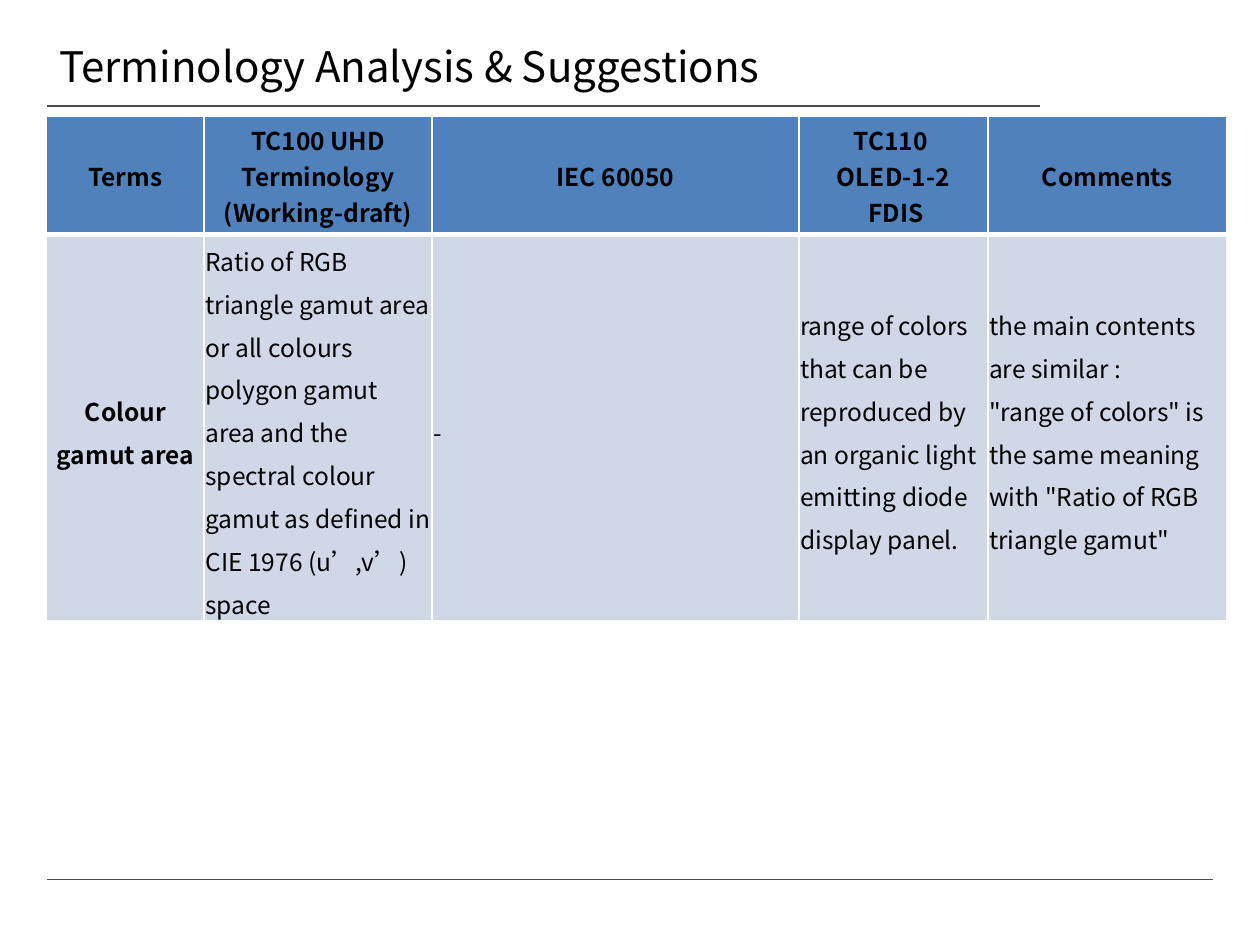
from copy import deepcopy
from dataclasses import dataclass

from lxml import etree
from pptx import Presentation
from pptx import util as u
from pptx.dml.color import RGBColor
from pptx.enum import shapes, text
from pptx.oxml.ns import qn


@dataclass(frozen=True)
class Theme:
    font: str = "Noto Sans CJK SC"
    ink: str = "000000"
    rule: str = "4D4D4F"
    header: str = "4F81BD"
    body: str = "D0D8E8"
    border: str = "FFFFFF"
    title_size: int = 24
    table_size: int = 14
    thin: int = 1
    thick: int = 3


LEFT = 0.37
COLUMNS = [1.25, 1.81, 2.91, 1.5, 1.9]
ROWS = [0.94, 3.07]
HEADERS = [
    ["Terms"],
    ["TC100 UHD Terminology\n(Working-draft)"],
    ["IEC 60050"],
    ["TC110 ", "OLED-1-2", " FDIS"],
    ["Comments"],
]
GAMUT_AREA = [
    ["Colour gamut area"],
    ["Ratio of RGB triangle gamut area or all colours polygon gamut area "
     "and the spectral colour gamut as defined in CIE 1976 (u’,v’) space"],
    ["-"],
    ["range of colors that can be reproduced by an organic light emitting "
     "diode display panel."],
    ['the main contents are similar :\n"range of colors" is the same meaning '
     'with "Ratio of RGB triangle gamut"'],
]


def set_all(target, values):
    for name, value in values.items():
        setattr(target, name, value)


class SlideBuilder:
    def __init__(self, slide, theme):
        self.s = slide
        self.theme = theme

    def rule(self, right, y):
        line = self.s.shapes.add_connector(
            shapes.MSO_CONNECTOR.STRAIGHT,
            u.Inches(LEFT), u.Inches(y), u.Inches(right), u.Inches(y))
        line.line.color.rgb = RGBColor.from_string(self.theme.rule)
        line.line.width = u.Pt(self.theme.thin)
        etree.SubElement(line._element.spPr, qn("a:effectLst"))

    def paragraphs(self, tf, lines, size, bold=False, **layout):
        """Write one paragraph per line; a newline inside it is a line break."""
        for i, line in enumerate(lines):
            p = tf.paragraphs[0] if i == 0 else tf.add_paragraph()
            p.text = line
            set_all(p, layout)
            for r in p.runs:
                set_all(r.font, {"name": self.theme.font, "size": u.Pt(size), "bold": bold})
                r.font.color.rgb = RGBColor.from_string(self.theme.ink)
                rPr = r._r.get_or_add_rPr()
                etree.SubElement(rPr, qn("a:ea"), typeface=self.theme.font)
            for br in p._p.findall(qn("a:br")):
                br.append(deepcopy(rPr))

    def title(self, wording, left, top, width, height):
        sp = self.s.shapes.add_textbox(*map(u.Inches, (left, top, width, height)))
        tf = sp.text_frame
        set_all(tf, {"word_wrap": True, "vertical_anchor": text.MSO_ANCHOR.MIDDLE})
        self.paragraphs(tf, [wording], self.theme.title_size)

    def borders(self, cell, top, bottom):
        thin = self.theme.thin
        tcPr = cell._tc.get_or_add_tcPr()
        sides = {"lnL": thin, "lnR": thin, "lnT": top, "lnB": bottom}
        for i, (side, width) in enumerate(sides.items()):
            ln = etree.Element(qn(f"a:{side}"), w=str(u.Pt(width)))
            fill = etree.SubElement(ln, qn("a:solidFill"))
            etree.SubElement(fill, qn("a:srgbClr"), val=self.theme.border)
            tcPr.insert(i, ln)

    def cell(self, cell, lines, is_header, is_term):
        theme = self.theme
        set_all(cell, {
            "margin_left": u.Inches(0.01), "margin_right": u.Inches(0.01),
            "margin_top": u.Inches(0.01), "margin_bottom": 0,
            "vertical_anchor": text.MSO_ANCHOR.MIDDLE,
        })
        cell.fill.solid()
        cell.fill.fore_color.rgb = RGBColor.from_string(
            theme.header if is_header else theme.body)
        if is_header:
            self.borders(cell, theme.thin, theme.thick)
        else:
            self.borders(cell, theme.thick, theme.thin)
        strong = is_header or is_term
        self.paragraphs(
            cell.text_frame, lines, theme.table_size, bold=strong,
            alignment=text.PP_ALIGN.CENTER if strong else text.PP_ALIGN.LEFT,
            line_spacing=1.0 if is_header else 1.2)

    def table(self, rows, top):
        table = self.s.shapes.add_table(
            len(rows), len(COLUMNS), u.Inches(LEFT), u.Inches(top),
            u.Inches(sum(COLUMNS)), u.Inches(sum(ROWS))).table
        for column, width in zip(table.columns, COLUMNS):
            column.width = u.Inches(width)
        for i, (row, height) in enumerate(zip(table.rows, ROWS)):
            row.height = u.Inches(height)
            for j, lines in enumerate(rows[i]):
                self.cell(table.cell(i, j), lines, i == 0, j == 0)


def main():
    prs = Presentation()
    prs.slide_width, prs.slide_height = u.Inches(10), u.Inches(7.5)
    builder = SlideBuilder(prs.slides.add_slide(prs.slide_layouts[6]), Theme())
    builder.rule(8.25, 0.84)
    builder.rule(9.63, 6.98)
    builder.title("Terminology Analysis & Suggestions", LEFT, 0.21, 6.68, 0.63)
    builder.table([HEADERS, GAMUT_AREA], 0.92)
    prs.save("out.pptx")


if __name__ == "__main__":
    main()
